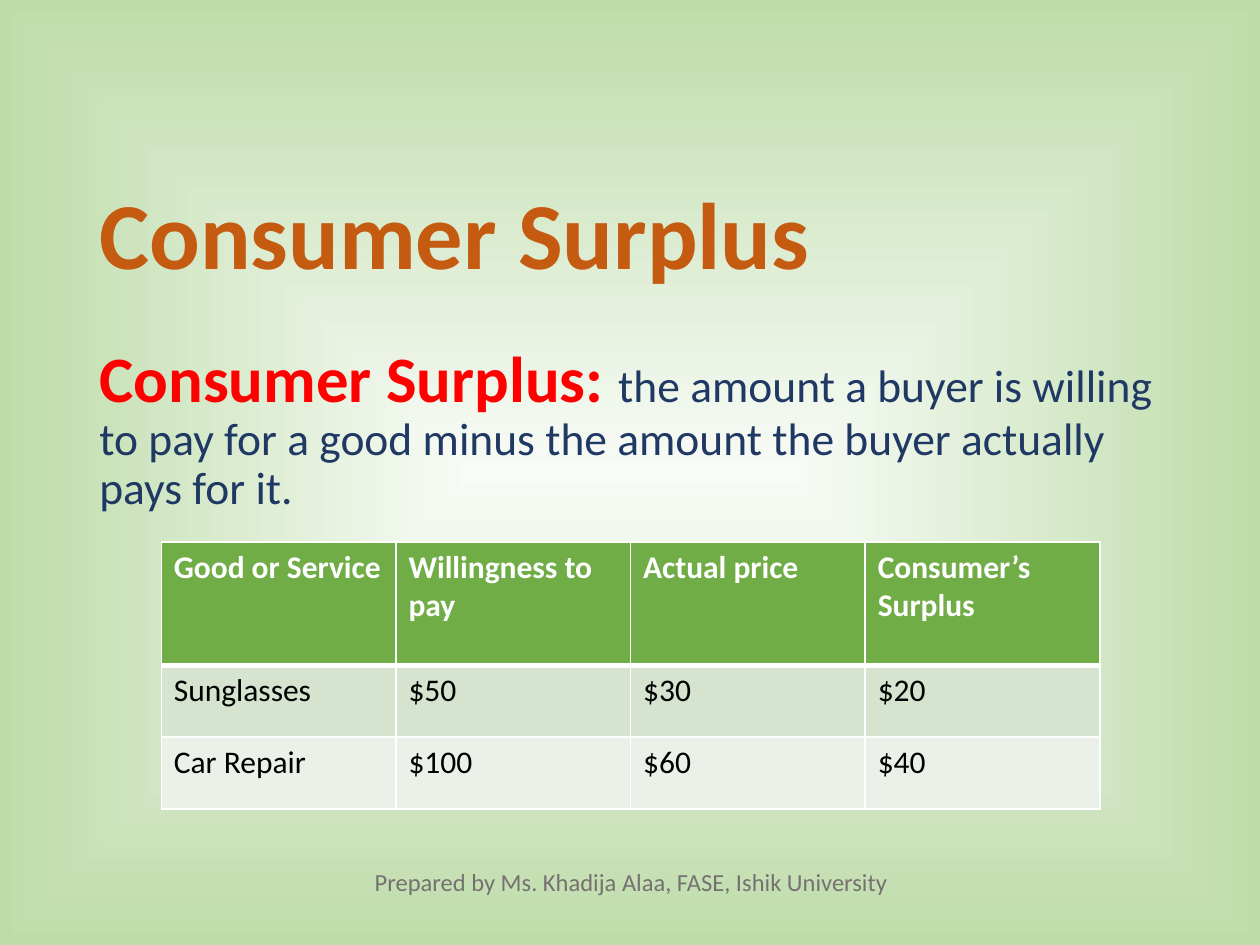
import pptx
import pptx.dml.color
import pptx.enum.text
import pptx.oxml
import pptx.oxml.ns
import pptx.util
from pptx.util import Inches

COLORS = {
    "glow": "F8FBF6", "edge": "BEDCAA", "title": "C55A11", "term": "FF0000",
    "body": "203864", "footer": "767171", "white": "FFFFFF", "black": "000000",
    "header": "70AD47", "band_dark": "D5E3CF", "band_light": "EBF1E9",
}
ROWS = [
    ["Good or Service", "Willingness to pay", "Actual price", "Consumer’s Surplus"],
    ["Sunglasses", "$50", "$30", "$20"],
    ["Car Repair", "$100", "$60", "$40"],
]
ROW_HEIGHTS = [0.98, 0.57, 0.57]
ROW_FILLS = ["header", "band_dark", "band_light"]
NAMESPACE = pptx.oxml.ns.nsdecls("a")
ANCHOR = pptx.enum.text.MSO_ANCHOR
ALIGN = pptx.enum.text.PP_ALIGN


def rgb(name):
    return pptx.dml.color.RGBColor.from_string(COLORS[name])


def add_span(para, text, *, size, color, bold=False):
    span = para.add_run()
    span.text = text
    span.font.name = "Calibri"
    span.font.size = pptx.util.Pt(size)
    span.font.bold = bold
    span.font.color.rgb = rgb(color)


def add_text(page, box, spans, *, anchor=ANCHOR.TOP, align=ALIGN.LEFT, spacing=1.0):
    frame = page.shapes.add_textbox(*map(Inches, box)).text_frame
    frame.word_wrap = True
    frame.vertical_anchor = anchor
    para = frame.paragraphs[0]
    para.alignment = align
    para.line_spacing = spacing
    for text, style in spans:
        add_span(para, text, **style)


def set_background(page):
    fill = page.background.fill
    fill.gradient()
    for stop, color in zip(fill.gradient_stops, ("glow", "edge")):
        stop.color.rgb = rgb(color)
    # Swap the linear direction for a glow from the centre
    gradient = page.background._cSld.find(".//" + pptx.oxml.ns.qn("a:gradFill"))
    linear = gradient.find(pptx.oxml.ns.qn("a:lin"))
    gradient.replace(linear, pptx.oxml.parse_xml(
        f'<a:path {NAMESPACE} path="shape">'
        '<a:fillToRect l="50000" t="50000" r="50000" b="50000"/></a:path>'))


def set_borders(cell, widths):
    properties = cell._tc.get_or_add_tcPr()
    for index, (side, points) in enumerate(widths.items()):
        properties.insert(index, pptx.oxml.parse_xml(
            f'<a:ln{side} {NAMESPACE} w="{pptx.util.Pt(points)}"><a:solidFill>'
            f'<a:srgbClr val="{COLORS["white"]}"/></a:solidFill></a:ln{side}>'))


def add_surplus_table(page, box):
    table = page.shapes.add_table(len(ROWS), len(ROWS[0]), *map(Inches, box)).table
    for column in table.columns:
        column.width = Inches(box[2] / len(ROWS[0]))
    for r, values in enumerate(ROWS):
        table.rows[r].height = Inches(ROW_HEIGHTS[r])
        is_header = r == 0
        for c, value in enumerate(values):
            cell = table.cell(r, c)
            cell.fill.solid()
            cell.fill.fore_color.rgb = rgb(ROW_FILLS[r])
            set_borders(cell, {"L": 1, "R": 1, "T": 3 if r == 1 else 1,
                               "B": 3 if is_header else 1})
            add_span(cell.text_frame.paragraphs[0], value, size=18, bold=is_header,
                     color="white" if is_header else "black")


def build_definition_slide(deck):
    page = deck.slides.add_slide(deck.slide_layouts[6])
    set_background(page)
    # Title
    add_text(page, (0.69, 1.17, 8.62, 1.45),
             [("Consumer Surplus", dict(size=54, color="title", bold=True))],
             anchor=ANCHOR.MIDDLE, spacing=0.9)
    # Definition
    add_text(page, (0.69, 2.7, 8.62, 4.13), [
        ("Consumer Surplus: ", dict(size=37, color="term", bold=True)),
        ("the amount a buyer is willing to pay for a good minus the amount "
         "the buyer actually pays for it.", dict(size=26, color="body")),
    ], spacing=0.9)
    # Footer
    add_text(page, (1.64, 6.83, 6.74, 0.6),
             [("Prepared by Ms. Khadija Alaa, FASE, Ishik University",
               dict(size=14, color="footer"))], align=ALIGN.CENTER)
    # Example table
    add_surplus_table(page, (1.28, 4.3, 7.45, sum(ROW_HEIGHTS)))


def main():
    deck = pptx.Presentation()
    deck.slide_width, deck.slide_height = Inches(10), Inches(7.5)
    build_definition_slide(deck)
    deck.save("out.pptx")


if __name__ == "__main__":
    main()
